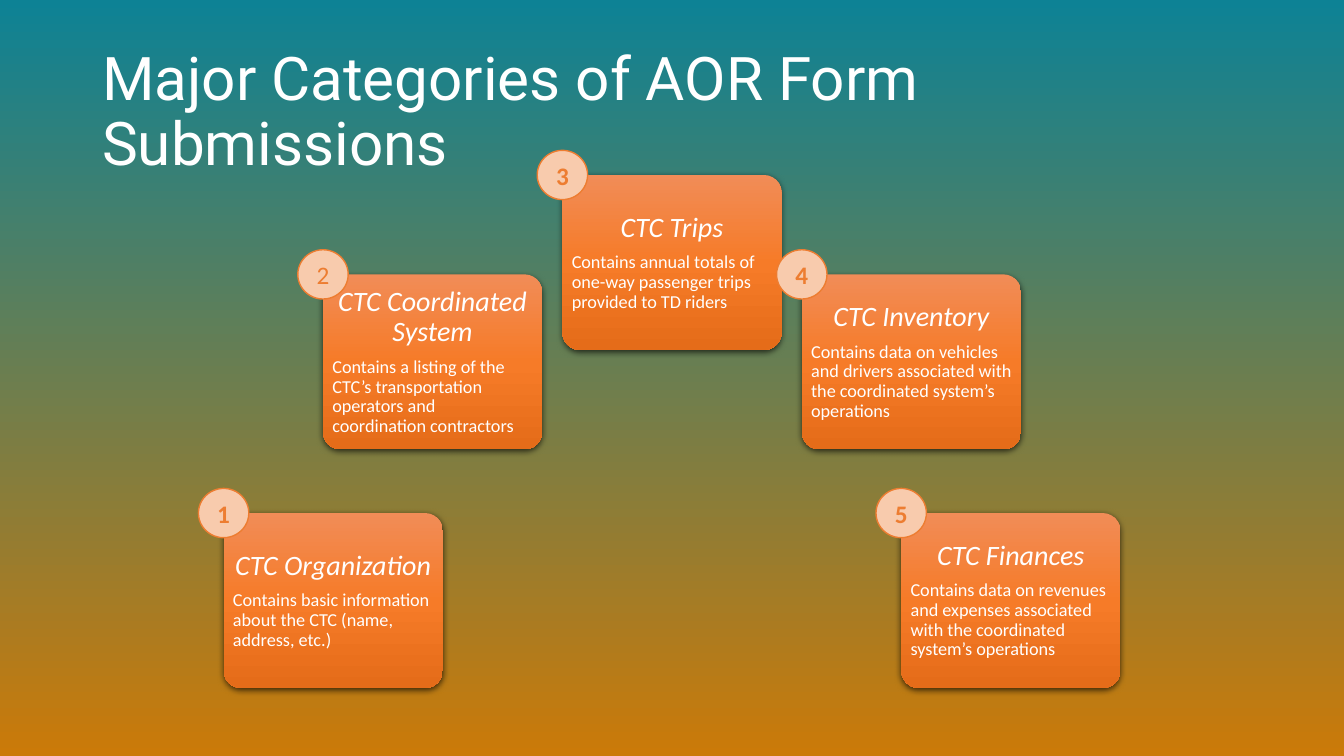
import copy

import pptx
import pptx.dml.color
import pptx.enum.shapes
import pptx.enum.text
import pptx.oxml
import pptx.oxml.ns
import pptx.util

Pt = pptx.util.Pt
Shape = pptx.enum.shapes.MSO_SHAPE
Align = pptx.enum.text.PP_ALIGN
Anchor = pptx.enum.text.MSO_ANCHOR

HUES = {
    "teal": "0D8295", "ochre": "CB7A09", "white": "FFFFFF", "black": "000000",
    "light": "F18C57", "mid": "F67B28", "deep": "E56C19",
    "peach": "F8CBAD", "orange": "ED7D31",
}
WIDE, HIGH = 156.5, 125
MID = 480
CARDS = [
    (-242, 366.5, "CTC Organization", True,
     "Contains basic information about the CTC (name, address, etc.)"),
    (-171, 196, "CTC Coordinated System", False,
     "Contains a listing of the CTC’s transportation operators and coordination contractors"),
    (0, 125, "CTC Trips", True,
     "Contains annual totals of one-way passenger trips provided to TD riders"),
    (171, 196, "CTC Inventory", True,
     "Contains data on vehicles and drivers associated with the coordinated system’s operations"),
    (242, 366.5, "CTC Finances", True,
     "Contains data on revenues and expenses associated with the coordinated system’s operations"),
]


def hue(name):
    """Return the named colour."""
    return pptx.dml.color.RGBColor.from_string(HUES[name])


def blend(fill, root, names):
    """Fill from top to bottom with evenly spaced colours."""
    fill.gradient()
    fill.gradient_angle = 270
    stops = root.find(".//" + pptx.oxml.ns.qn("a:gsLst"))
    while len(stops) < len(names):
        stops.append(copy.deepcopy(stops[0]))
    for i, (stop, name) in enumerate(zip(fill.gradient_stops, names)):
        stop.position = i / (len(names) - 1)
        stop.color.rgb = hue(name)


def shade(shape):
    """Cast a soft shadow below a shape."""
    shape.shadow.inherit = False
    effects = shape._element.spPr.find(pptx.oxml.ns.qn("a:effectLst"))
    effects.append(pptx.oxml.parse_xml(
        f'<a:outerShdw {pptx.oxml.ns.nsdecls("a")} blurRad="{Pt(4.5)}" dist="{Pt(1.5)}" '
        f'dir="5400000" algn="ctr" rotWithShape="0"><a:srgbClr val="{HUES["black"]}">'
        '<a:alpha val="63000"/></a:srgbClr></a:outerShdw>'))


def setup(shape, inset):
    """Prepare a text frame with equal insets and return it."""
    frame = shape.text_frame
    frame.word_wrap = True
    frame.vertical_anchor = Anchor.MIDDLE
    frame.margin_left = frame.margin_right = Pt(inset)
    frame.margin_top = frame.margin_bottom = Pt(inset)
    return frame


def write(para, text, size, tint="white", face="Calibri", align=Align.LEFT,
          bold=False, slant=False, pitch=0.9, after=0):
    """Add one styled run to a paragraph."""
    para.alignment = align
    para.line_spacing = pitch
    para.space_after = Pt(after)
    run = para.add_run()
    run.text = text
    font = run.font
    font.size, font.name = Pt(size), face
    font.bold, font.italic = bold, slant
    font.color.rgb = hue(tint)


def title(slide, left, top, width, height):
    """Place the slide title."""
    box = slide.shapes.add_textbox(Pt(left), Pt(top), Pt(width), Pt(height))
    frame = setup(box, 3.6)
    frame.margin_left = frame.margin_right = Pt(7.2)
    write(frame.paragraphs[0], "Major Categories of AOR Form Submissions", 43, face="Roboto")


def card(slide, left, top, head, body):
    """Place one category card."""
    shape = slide.shapes.add_shape(
        Shape.ROUNDED_RECTANGLE, Pt(left), Pt(top), Pt(WIDE), Pt(HIGH))
    shape.adjustments[0] = 0.1
    blend(shape.fill, shape._element.spPr, ["light", "mid", "deep"])
    shape.line.fill.background()
    shade(shape)
    frame = setup(shape, 3)
    write(frame.paragraphs[0], head, 20, align=Align.CENTER, slant=True, after=7)
    write(frame.add_paragraph(), body, 13)


def badge(slide, left, top, text, bold):
    """Centre a number badge on a card corner."""
    wide, high = 36, 35.2
    shape = slide.shapes.add_shape(
        Shape.FLOWCHART_CONNECTOR, Pt(left - wide / 2), Pt(top - high / 2), Pt(wide), Pt(high))
    shape.shadow.inherit = False
    shape.fill.solid()
    shape.fill.fore_color.rgb = hue("peach")
    shape.line.color.rgb = hue("orange")
    shape.line.width = Pt(1)
    frame = setup(shape, 0)
    write(frame.paragraphs[0], text, 18, "orange", align=Align.CENTER, bold=bold, pitch=1.0)


def main():
    """Build and save the slide."""
    deck = pptx.Presentation()
    deck.slide_width, deck.slide_height = Pt(960), Pt(540)
    slide = deck.slides.add_slide(deck.slide_layouts[6])
    blend(slide.background.fill, slide._element, ["teal", "ochre"])
    title(slide, 66, 28.8, 828, 104.4)
    for shift, top, head, _, body in CARDS:
        card(slide, MID + shift - WIDE / 2, top, head, body)
    for i, (shift, top, _, bold, _) in enumerate(CARDS, 1):
        badge(slide, MID + shift - WIDE / 2, top, str(i), bold)
    deck.save("out.pptx")


if __name__ == "__main__":
    main()
